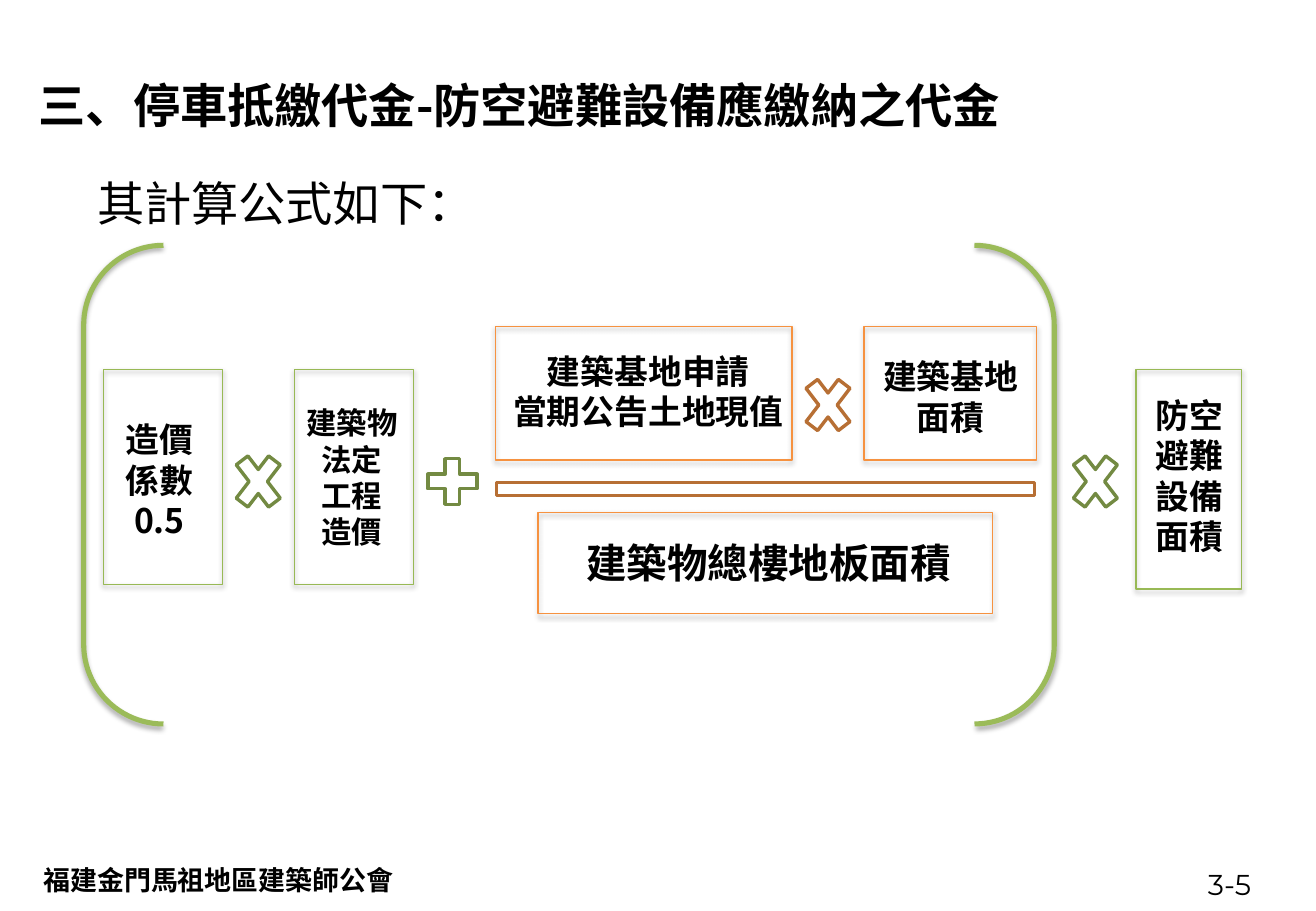
import dataclasses

import lxml.etree
import pptx
import pptx.dml.color
import pptx.enum.shapes
import pptx.enum.text
import pptx.oxml.ns
import pptx.util

Cm = pptx.util.Cm
Pt = pptx.util.Pt
Kind = pptx.enum.shapes.MSO_SHAPE
Align = pptx.enum.text.PP_ALIGN
Fit = pptx.enum.text.MSO_AUTO_SIZE
Anchor = pptx.enum.text.MSO_ANCHOR
qn = pptx.oxml.ns.qn

SANS = "Noto Sans CJK SC"
COLORS = {
    "black": "000000",
    "green": "98B955",
    "olive": "738A42",
    "orange": "F69240",
    "rust": "B76F34",
    "bracket": "9BBB59",
}


@dataclasses.dataclass
class Mark:
    kind: Kind
    left: float
    top: float
    width: float
    height: float
    color: str
    line: float = 2
    shade: int = 0


@dataclasses.dataclass
class Label:
    text: str
    left: float
    top: float
    width: float
    height: float
    size: int = 20
    bold: bool = True
    align: Align = Align.CENTER
    font: str = SANS
    wrap: bool = True
    tight: bool = False


def frame(left: float, top: float, width: float, height: float, color: str) -> Mark:
    return Mark(Kind.RECTANGLE, left, top, width, height, color, 0.75, 38)


def times(left: float, top: float, color: str) -> Mark:
    return Mark(Kind.MATH_MULTIPLY, left, top, 1.3, 1.7, color)


MARKS = [
    frame(2.16, 7.72, 2.49, 4.5, "green"),
    frame(6.15, 7.72, 2.49, 4.5, "green"),
    frame(10.36, 6.83, 6.2, 2.79, "orange"),
    frame(18.06, 6.83, 3.61, 2.79, "orange"),
    frame(11.25, 10.72, 9.5, 2.11, "orange"),
    frame(23.75, 7.72, 2.21, 4.6, "green"),
    times(4.75, 9.22, "olive"),
    times(16.66, 7.62, "rust"),
    times(22.25, 9.22, "olive"),
    Mark(Kind.MATH_PLUS, 8.76, 9.42, 1.4, 1.3, "olive"),
    Mark(Kind.MATH_MINUS, 8.36, 9.63, 15.29, 1.19, "rust"),
    Mark(Kind.DOUBLE_BRACKET, 1.75, 5.13, 20.29, 10.01, "bracket", 3, 35),
]

LABELS = [
    Label("三、停車抵繳代金-防空避難設備應繳納之代金", 0.56, 1.47, 22.1, 1.45, 28, align=Align.LEFT),
    Label("其計算公式如下：", 1.78, 3.51, 8.48, 1.45, 28, False, Align.LEFT, wrap=False),
    Label("造價\n係數\n0.5", 1.24, 8.64, 4.19, 2.82),
    Label("建築物\n法定\n工程\n造價", 5.26, 8.33, 4.19, 3.33, 18),
    Label("建築基地申請\n當期公告土地現值", 7.65, 7.21, 11.81, 1.96),
    Label("建築基地\n面積", 13.97, 7.32, 11.81, 1.96),
    Label("建築物總樓地板面積", 10.16, 11.13, 11.81, 1.27, 24),
    Label("防空\n避難\n設備\n面積", 23.16, 8.13, 3.4, 3.68),
    Label("福建金門馬祖地區建築師公會", 0.66, 17.93, 7.92, 0.94, 16,
          align=Align.LEFT, font="Calibri", wrap=False),
    Label("3-5", 25.25, 18.14, 1.52, 0.71, 17, False, Align.LEFT, "Montserrat", False, True),
]


def tint(name: str) -> pptx.dml.color.RGBColor:
    return pptx.dml.color.RGBColor.from_string(COLORS[name])


def cast(shape, alpha: int) -> None:
    effects = shape._element.spPr.find(qn("a:effectLst"))
    shade = lxml.etree.SubElement(
        effects, qn("a:outerShdw"), blurRad=str(Pt(3.1)), dist=str(Pt(1.7)),
        dir="5400000", rotWithShape="0")
    color = lxml.etree.SubElement(shade, qn("a:srgbClr"), val=COLORS["black"])
    lxml.etree.SubElement(color, qn("a:alpha"), val=str(alpha * 1000))


def draw(slide, mark: Mark) -> None:
    shape = slide.shapes.add_shape(
        mark.kind, Cm(mark.left), Cm(mark.top), Cm(mark.width), Cm(mark.height))
    shape.fill.background()
    shape.line.color.rgb = tint(mark.color)
    shape.line.width = Pt(mark.line)
    shape.shadow.inherit = False
    if mark.shade:
        cast(shape, mark.shade)


def write(slide, label: Label) -> None:
    box = slide.shapes.add_textbox(
        Cm(label.left), Cm(label.top), Cm(label.width), Cm(label.height))
    body = box.text_frame
    body.text = label.text
    body.word_wrap = label.wrap
    if label.tight:
        body.margin_left = body.margin_right = body.margin_top = body.margin_bottom = 0
        body.vertical_anchor = Anchor.MIDDLE
    else:
        body.auto_size = Fit.SHAPE_TO_FIT_TEXT
    for line in body.paragraphs:
        line.alignment = label.align
        for run in line.runs:
            run.font.size = Pt(label.size)
            run.font.bold = label.bold
            run.font.color.rgb = tint("black")
            run.font.name = label.font
            lxml.etree.SubElement(run.font._element, qn("a:ea"), typeface=SANS)


def main() -> None:
    deck = pptx.Presentation()
    deck.slide_width = Cm(27.51)
    deck.slide_height = Cm(19.05)
    slide = deck.slides.add_slide(deck.slide_layouts[6])
    for mark in MARKS:
        draw(slide, mark)
    for label in LABELS:
        write(slide, label)
    deck.save("out.pptx")


if __name__ == "__main__":
    main()
